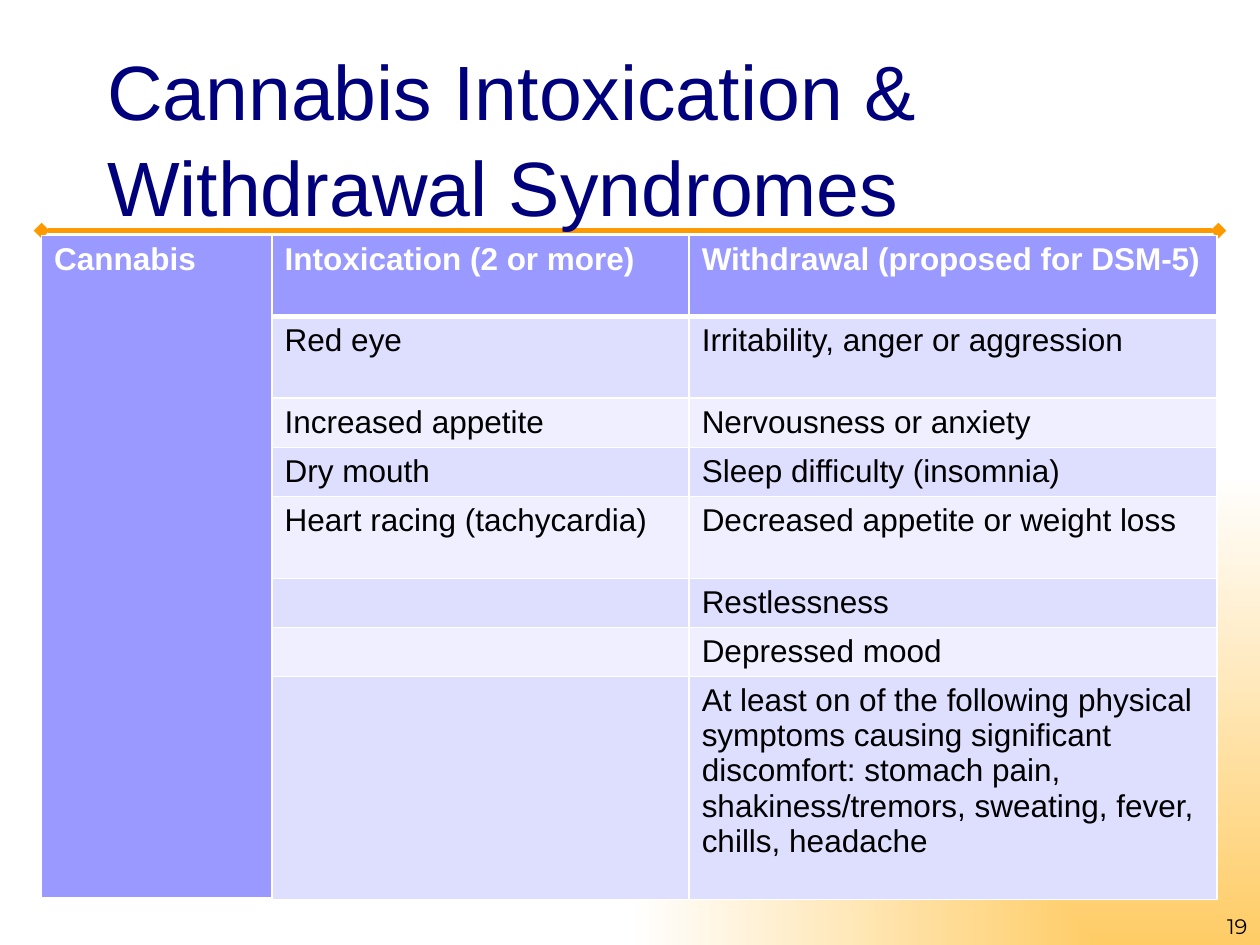
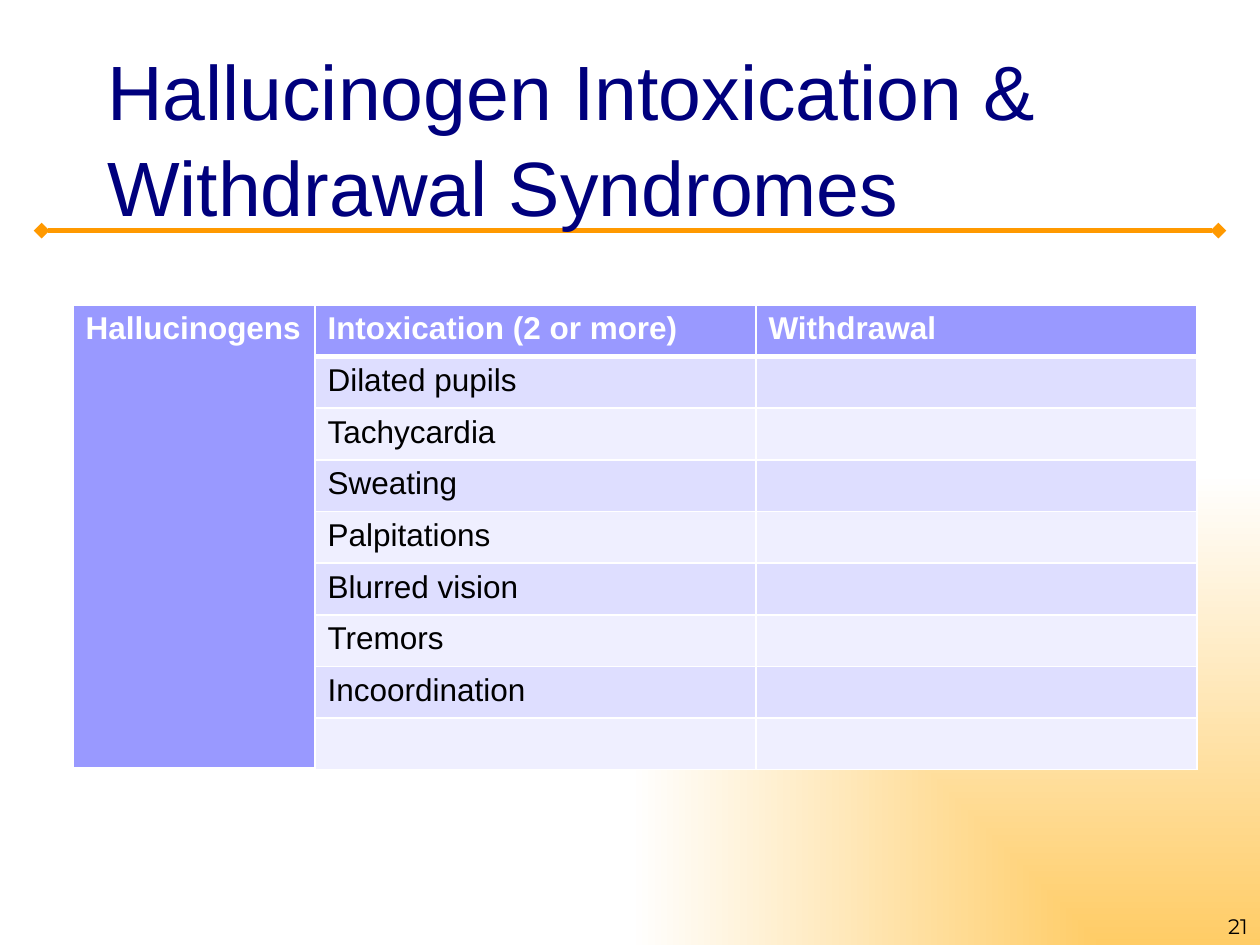
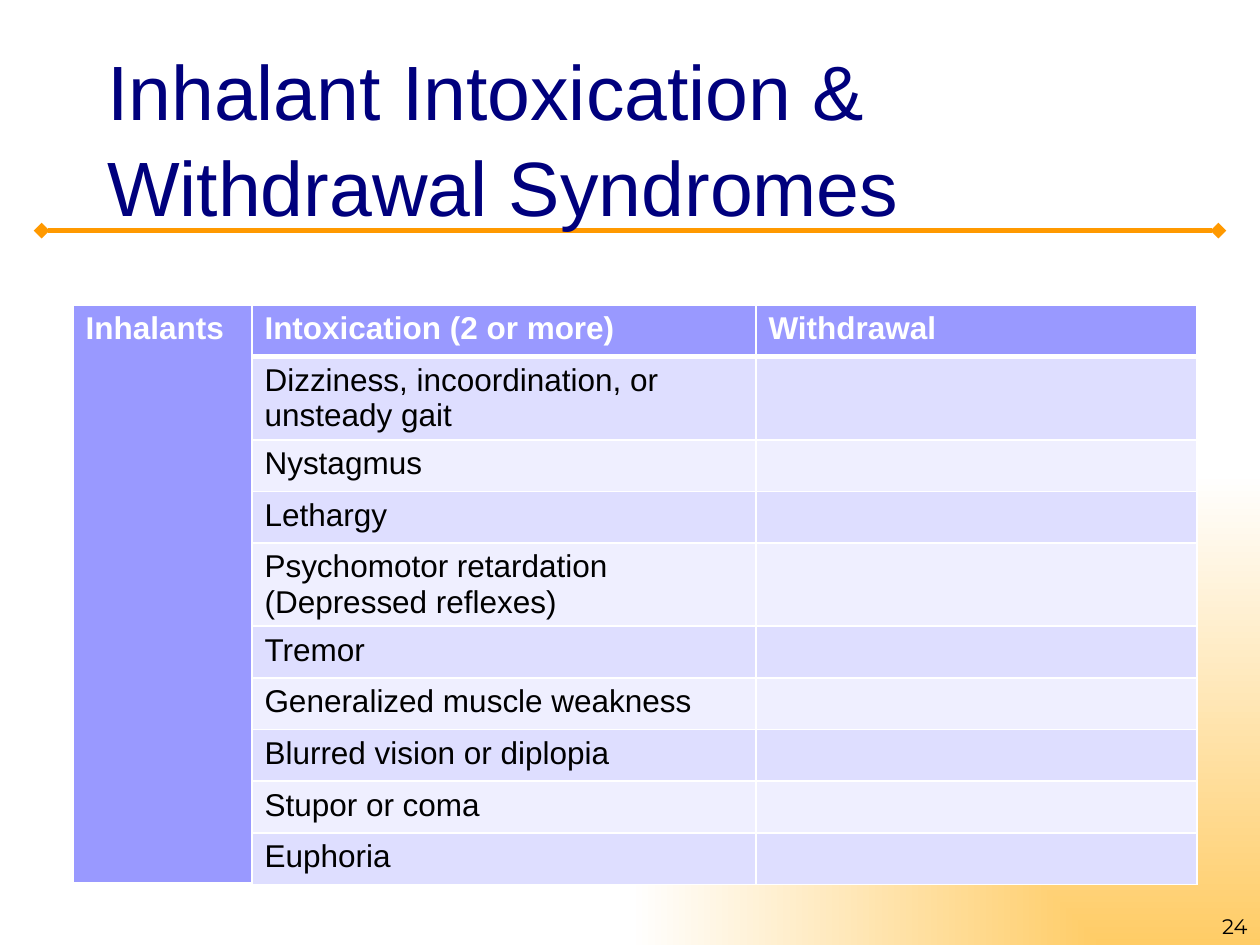
from pptx import Presentation
from pptx.dml.color import RGBColor
from pptx.enum.shapes import MSO_CONNECTOR
from pptx.enum.text import MSO_ANCHOR, MSO_AUTO_SIZE, PP_ALIGN
from pptx.oxml.ns import qn
from pptx.util import Inches, Pt
from lxml.etree import SubElement

NAVY = "00007D"
ORANGE = "FF9900"
GOLD = "FFCC66"
WHITE = "FFFFFF"
BLACK = "000000"
HEADER_FILL = "9999FF"
BAND_FILLS = ("DEDEFF", "EFEFFF")
BODY_FONT = "Arial"
NUMBER_FONT = "Montserrat"
ROW = 0.41
TWO_LINE_ROW = 0.66

SLIDES = [
    {
        "substance": "Cannabis",
        "title": "Cannabis Intoxication & Withdrawal Syndromes",
        "number": "19",
        "position": (0.33, 1.87),
        "columns": [1.83, 3.31, 4.19],
        "heights": [0.64, 0.65, 0.39, 0.39, 0.65, 0.39, 0.39, 1.77],
        "rows": [
            ("Intoxication (2 or more)", "Withdrawal (proposed for DSM-5)"),
            ("Red eye", "Irritability, anger or aggression"),
            ("Increased appetite", "Nervousness or anxiety"),
            ("Dry mouth", "Sleep difficulty (insomnia)"),
            ("Heart racing (tachycardia)", "Decreased appetite or weight loss"),
            ("", "Restlessness"),
            ("", "Depressed mood"),
            ("", "At least on of the following physical symptoms causing "
                 "significant discomfort: stomach pain, shakiness/tremors, "
                 "sweating, fever, chills, headache"),
        ],
    },
    {
        "substance": "Hallucinogens",
        "title": "Hallucinogen Intoxication & Withdrawal Syndromes",
        "number": "21",
        "position": (0.58, 2.42),
        "columns": [1.92, 3.5, 3.5],
        "heights": [ROW] * 9,
        "rows": [
            ("Intoxication (2 or more)", "Withdrawal"),
            ("Dilated pupils", ""),
            ("Tachycardia", ""),
            ("Sweating", ""),
            ("Palpitations", ""),
            ("Blurred vision", ""),
            ("Tremors", ""),
            ("Incoordination", ""),
            ("", ""),
        ],
    },
    {
        "substance": "Inhalants",
        "title": "Inhalant Intoxication & Withdrawal Syndromes",
        "number": "24",
        "position": (0.58, 2.42),
        "columns": [1.42, 4, 3.5],
        "heights": [ROW, TWO_LINE_ROW, ROW, ROW, TWO_LINE_ROW] + [ROW] * 5,
        "rows": [
            ("Intoxication (2 or more)", "Withdrawal"),
            ("Dizziness, incoordination, or unsteady gait", ""),
            ("Nystagmus", ""),
            ("Lethargy", ""),
            ("Psychomotor retardation (Depressed reflexes)", ""),
            ("Tremor", ""),
            ("Generalized muscle weakness", ""),
            ("Blurred vision or diplopia", ""),
            ("Stupor or coma", ""),
            ("Euphoria", ""),
        ],
    },
]


def color(value):
    return RGBColor.from_string(value)


def add_run(paragraph, text, size, font_name, font_color, bold=False):
    run = paragraph.add_run()
    run.text = text
    run.font.size = Pt(size)
    run.font.name = font_name
    run.font.bold = bold
    run.font.color.rgb = color(font_color)


def set_background(master):
    fill = master.background.fill
    fill.gradient()
    for stop, value in zip(fill.gradient_stops, (GOLD, WHITE)):
        stop.color.rgb = color(value)
    gradient = master.element.find(".//" + qn("a:gradFill"))
    gradient.remove(gradient.find(qn("a:lin")))
    corner = SubElement(gradient, qn("a:path"), path="rect")
    SubElement(corner, qn("a:fillToRect"), l="100000", t="100000")


def add_title_rule(slide):
    rule = slide.shapes.add_connector(
        MSO_CONNECTOR.STRAIGHT, Inches(0.33), Inches(1.83), Inches(9.67), Inches(1.83))
    rule.line.color.rgb = color(ORANGE)
    rule.line.width = Pt(3)
    line = rule.element.spPr.find(qn("a:ln"))
    for end in ("a:headEnd", "a:tailEnd"):
        SubElement(line, qn(end), type="diamond")
    SubElement(rule.element.spPr, qn("a:effectLst"))
    slide.shapes.element.insert(2, rule.element)


def set_title(slide, text):
    title = slide.shapes.title
    title.left, title.top = Inches(0.75), Inches(0.33)
    title.width, title.height = Inches(9.25), Inches(1.5)
    frame = title.text_frame
    frame.auto_size = MSO_AUTO_SIZE.NONE
    frame.word_wrap = True
    frame.vertical_anchor = MSO_ANCHOR.MIDDLE
    paragraph = frame.paragraphs[0]
    paragraph.alignment = PP_ALIGN.LEFT
    paragraph.line_spacing = 1.04
    add_run(paragraph, text, 44, BODY_FONT, NAVY)


def add_slide_number(slide, number):
    box = slide.shapes.add_textbox(Inches(7.67), Inches(7), Inches(2.33), Inches(0.5))
    frame = box.text_frame
    frame.word_wrap = True
    frame.vertical_anchor = MSO_ANCHOR.BOTTOM
    paragraph = frame.paragraphs[0]
    paragraph.alignment = PP_ALIGN.RIGHT
    add_run(paragraph, number, 12, NUMBER_FONT, BLACK)


def set_borders(cell, bottom_width):
    properties = cell._tc.get_or_add_tcPr()
    widths = {"a:lnL": 1, "a:lnR": 1, "a:lnT": 1, "a:lnB": bottom_width}
    for side, width in widths.items():
        line = SubElement(properties, qn(side), w=str(Pt(width)))
        solid = SubElement(line, qn("a:solidFill"))
        SubElement(solid, qn("a:srgbClr"), val=WHITE)


def format_cell(cell, text, fill, is_header, bottom_width):
    set_borders(cell, bottom_width)
    cell.fill.solid()
    cell.fill.fore_color.rgb = color(fill)
    if text:
        add_run(cell.text_frame.paragraphs[0], text, 18, BODY_FONT,
                WHITE if is_header else BLACK, is_header)
    else:
        cell.margin_top = cell.margin_bottom = 0


def add_syndrome_table(slide, content):
    rows, columns, heights = content["rows"], content["columns"], content["heights"]
    left, top = content["position"]
    table = slide.shapes.add_table(
        len(rows), len(columns), Inches(left), Inches(top),
        Inches(sum(columns)), Inches(sum(heights))).table
    for column, width in zip(table.columns, columns):
        column.width = Inches(width)
    for row, height in zip(table.rows, heights):
        row.height = Inches(height)
    table.cell(0, 0).merge(table.cell(len(rows) - 1, 0))
    for row_index, symptoms in enumerate(rows):
        is_header = row_index == 0
        substance = content["substance"] if is_header else ""
        band = HEADER_FILL if is_header else BAND_FILLS[(row_index - 1) % 2]
        for column_index, text in enumerate((substance, *symptoms)):
            fill = band if column_index else HEADER_FILL
            format_cell(table.cell(row_index, column_index), text, fill,
                        is_header, 3 if is_header else 1)


def main():
    presentation = Presentation()
    presentation.slide_width = Inches(10)
    presentation.slide_height = Inches(7.5)
    set_background(presentation.slide_master)
    title_only = presentation.slide_layouts[5]
    for content in SLIDES:
        slide = presentation.slides.add_slide(title_only)
        add_title_rule(slide)
        set_title(slide, content["title"])
        add_syndrome_table(slide, content)
        add_slide_number(slide, content["number"])
    presentation.save("out.pptx")


if __name__ == "__main__":
    main()
